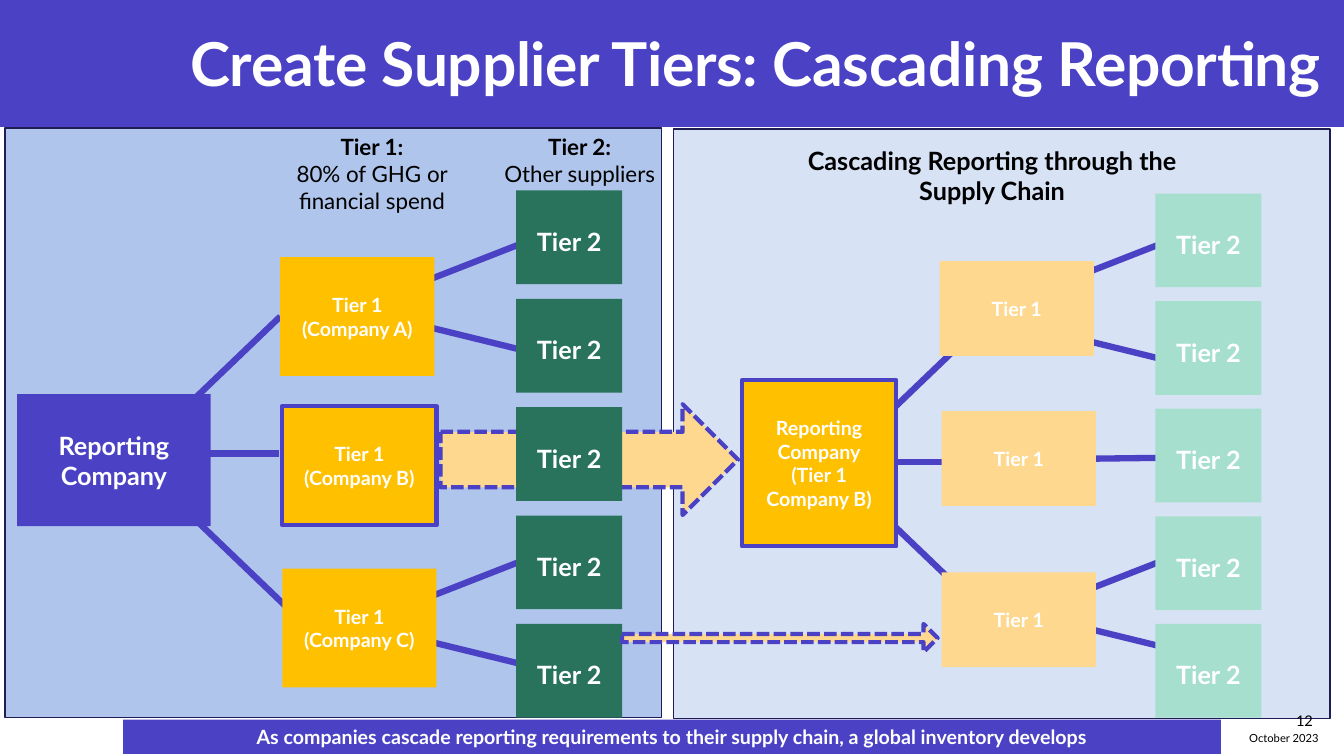
from pptx import Presentation
from pptx.dml.color import RGBColor
from pptx.enum.dml import MSO_LINE
from pptx.enum.shapes import MSO_CONNECTOR, MSO_SHAPE
from pptx.enum.text import MSO_ANCHOR, PP_ALIGN
from pptx.oxml.ns import qn
from pptx.util import Inches, Pt
from lxml.etree import SubElement

COLOURS = {
    "indigo": "4A41C5", "navy": "201C56", "sky": "AFC5EB", "mist": "D7E2F5",
    "gold": "FFC000", "sand": "FFD88F", "green": "29735C", "mint": "A6DFCE",
    "white": "FFFFFF", "black": "000000",
}


class TierSlide:
    """Draws the supplier tier diagram on one page in a shared style."""

    font = "Lato"

    def __init__(self, page):
        self.page = page

    def colour(self, name):
        return RGBColor.from_string(COLOURS[name])

    def set_text(self, shape, text, size, colour="white", bold=True,
                 align=PP_ALIGN.CENTER, anchor=MSO_ANCHOR.MIDDLE):
        frame = shape.text_frame
        frame.text = text
        frame.word_wrap = True
        frame.vertical_anchor = anchor
        for paragraph in frame.paragraphs:
            paragraph.alignment = align
            for span in paragraph.runs:
                span.font.name = self.font
                span.font.size = Pt(size)
                span.font.bold = bold
                span.font.color.rgb = self.colour(colour)

    def shape(self, bounds, fill, outline=None, width=3, kind=MSO_SHAPE.RECTANGLE):
        shape = self.page.shapes.add_shape(kind, *map(Inches, bounds))
        shape.shadow.inherit = False
        shape.fill.solid()
        shape.fill.fore_color.rgb = self.colour(fill)
        if outline:
            shape.line.color.rgb = self.colour(outline)
            shape.line.width = Pt(width)
        else:
            shape.line.fill.background()
        return shape

    def box(self, bounds, fill, text, size=14, outline=None):
        box = self.shape(bounds, fill, outline)
        self.set_text(box, text, size)
        return box

    def tier_two(self, left, top, fill):
        box = self.box((left, top, 1.05, 0.93), fill, "Tier 2", 18)
        box.text_frame.margin_top = Inches(0.13)

    def label(self, bounds, text, size, **style):
        label = self.page.shapes.add_textbox(*map(Inches, bounds))
        self.set_text(label, text, size, **style)
        return label

    def heading(self, bounds, text):
        label = self.label(bounds, text, 16, colour="black", anchor=MSO_ANCHOR.TOP)
        for span in label.text_frame.paragraphs[1].runs:
            span.font.bold = False

    def arrow(self, bounds, shaft=0.5):
        arrow = self.shape(bounds, "sand", "indigo", kind=MSO_SHAPE.RIGHT_ARROW)
        arrow.adjustments[0] = shaft
        arrow.line.dash_style = MSO_LINE.SQUARE_DOT

    def link(self, left, top, across, down):
        link = self.page.shapes.add_connector(
            MSO_CONNECTOR.STRAIGHT,
            *map(Inches, (left, top, left + across, top + down)))
        link.line.color.rgb = self.colour("indigo")
        link.line.width = Pt(4.5)
        SubElement(link._element.spPr, qn("a:effectLst"))
        return link

    def fan(self, left, top):
        self.link(left + 0.06, top + 0.36, 1.21, 1.16)
        self.link(left + 0.24, top, 0.96, 0)
        return self.link(left, top - 0.2, 1.21, -1.16)


def main():
    deck = Presentation()
    deck.slide_width, deck.slide_height = Inches(13.33), Inches(7.5)
    slide = TierSlide(deck.slides.add_slide(deck.slide_layouts[6]))

    slide.shape((0, 0, 13.33, 1.26), "indigo")
    slide.shape((6.68, 1.28, 6.51, 5.85), "mist", "navy", 1)
    slide.shape((0.05, 1.27, 6.51, 5.85), "sky", "navy", 1)
    title = slide.label((0.29, 0.19, 12.9, 0.85),
                        "Create Supplier Tiers: Cascading Reporting", 43.2,
                        align=PP_ALIGN.RIGHT)
    title.text_frame.paragraphs[0].runs[0].font._element.set("spc", "-20")
    slide.label((12.43, 6.95, 0.69, 0.4), "12", 10.5, colour="black",
                bold=False, align=PP_ALIGN.RIGHT)
    slide.heading((2.46, 1.27, 2.46, 0.91), "Tier 1:\n80% of GHG or financial spend")
    slide.heading((4.78, 1.27, 1.94, 0.64), "Tier 2:\nOther suppliers")
    slide.arrow((4.37, 4.01, 2.95, 1.1))

    for left, top in [(4.19, 2.8), (4.24, 5.93), (10.41, 2.85), (10.46, 5.98)]:
        slide.link(left, top, 1.51, -0.59)
    for left, top in [(4.19, 3.23), (4.24, 6.36), (10.41, 3.29), (10.44, 6.15)]:
        slide.link(left, top, 1.51, 0.37)
    company_a_link = slide.fan(1.57, 4.5)
    slide.fan(8.52, 4.58)
    middle_link = slide.link(10.87, 4.55, 0.83, -0.01)

    slide.box((0.17, 3.91, 1.92, 1.31), "indigo", "Reporting Company", 18)
    company_a = slide.box((2.78, 2.55, 1.53, 1.18), "gold", "Tier 1\n(Company A)")
    slide.box((2.8, 4.03, 1.53, 1.18), "gold", "Tier 1\n(Company B)", outline="indigo")
    slide.box((2.8, 5.64, 1.53, 1.18), "gold", "Tier 1\n(Company C)")
    company_a_link.end_connect(company_a, 1)
    for row in range(5):
        slide.tier_two(5.12, 1.89 + row * 4.3 / 4, "green")

    slide.box((7.36, 3.77, 1.53, 1.65), "gold",
              "Reporting Company\n(Tier 1 Company B)", outline="indigo")
    for row in range(5):
        slide.tier_two(11.46, 1.92 + row * 4.27 / 4, "mint")
    cascade = [slide.box((left, top, 1.53, 0.94), "sand", "Tier 1")
               for left, top in [(9.32, 2.59), (9.34, 4.08), (9.34, 5.68)]]
    middle_link.begin_connect(cascade[1], 3)

    slide.label((7.65, 1.39, 4.38, 0.71), "Cascading Reporting through the Supply Chain",
                18, colour="black", anchor=MSO_ANCHOR.TOP)
    slide.box((1.22, 7.14, 10.89, 0.34), "indigo",
              "As companies cascade reporting requirements to their supply chain, "
              "a global inventory develops")
    slide.arrow((6.17, 6.19, 3.13, 0.28), 0.29)
    slide.label((12.27, 7.2, 0.93, 0.24), "October 2023", 8, colour="black", bold=False)
    deck.save("out.pptx")


if __name__ == "__main__":
    main()
